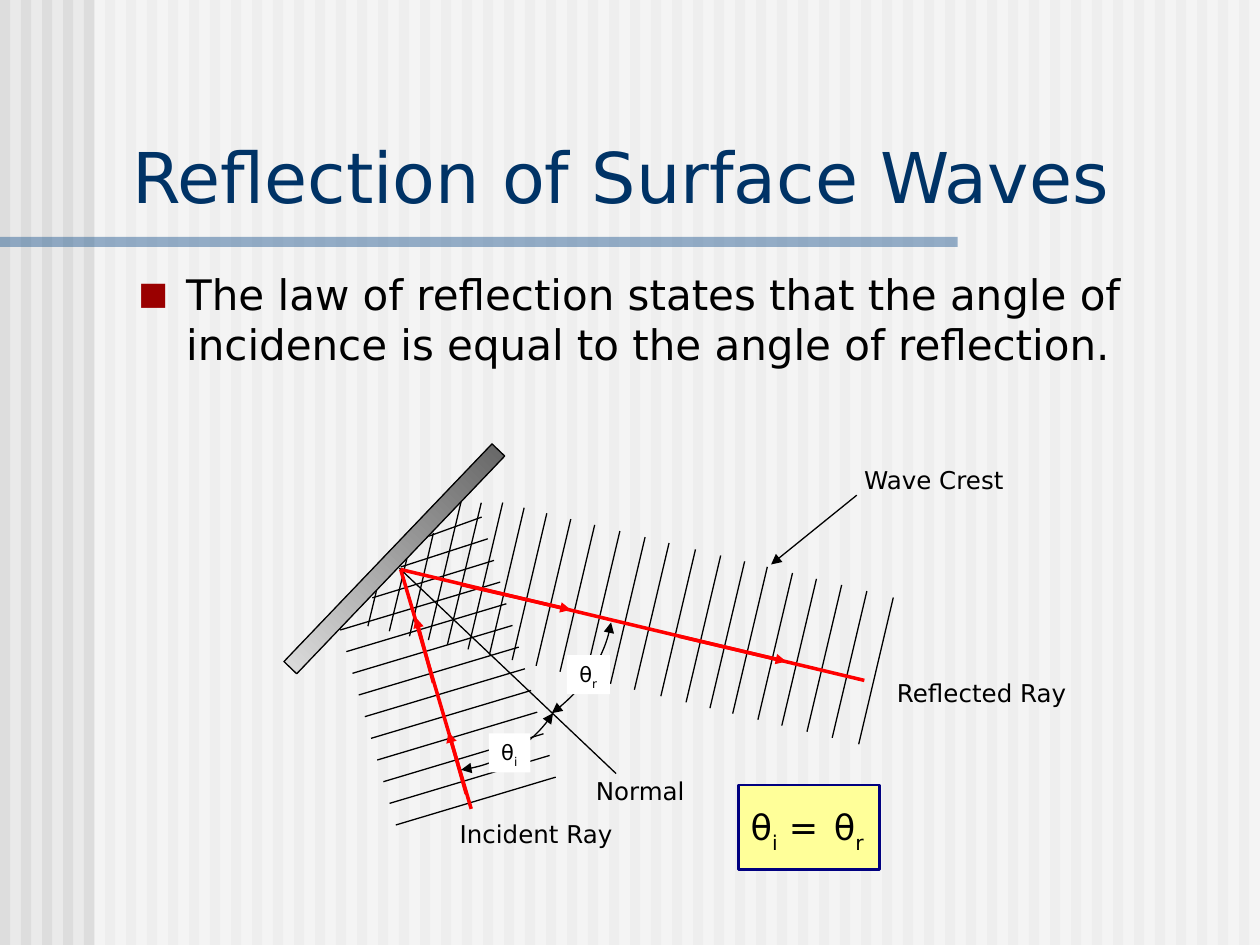
from lxml import etree
from pptx import Presentation
from pptx import util as u
from pptx.dml.color import RGBColor
from pptx.enum import shapes, text
from pptx.oxml.ns import qn

Inches, Pt = u.Inches, u.Pt
FONT = "DejaVu Sans"
COLORS = {
    "background": "EAEAEA", "stripe": "DDDDDD", "white": "FFFFFF",
    "rule": "336699", "title": "003366", "bullet": "9A0000",
    "black": "000000", "ray": "FF0000", "formula": "FFFF99",
    "navy": "000080", "mirror": "666666",
}
RGB = {name: RGBColor.from_string(c) for name, c in COLORS.items()}


def add_line(start, end, color="black", width=0.75, arrow=False):
    line = s.shapes.add_connector(shapes.MSO_CONNECTOR.STRAIGHT,
                                  *[Inches(v) for v in (*start, *end)])
    line.line.color.rgb = RGB[color]
    line.line.width = Pt(width)
    if arrow:
        etree.SubElement(line.line._get_or_add_ln(), qn("a:tailEnd"), type="triangle")
    etree.SubElement(line._element.spPr, qn("a:effectLst"))


def write(shape, runs, color="black", wrap=False):
    """Fill a shape with (text, size, is_subscript) runs, top left."""
    tf = shape.text_frame
    tf.word_wrap = wrap
    tf.vertical_anchor = text.MSO_ANCHOR.TOP
    p = tf.paragraphs[0]
    p.alignment = text.PP_ALIGN.LEFT
    for content, size, subscript in runs:
        r = p.add_run()
        r.text = content
        r.font.name = FONT
        r.font.size = Pt(size)
        r.font.color.rgb = RGB[color]
        if subscript:
            r._r.get_or_add_rPr().set("baseline", "-30000")


prs = Presentation()
prs.slide_width, prs.slide_height = Inches(10), Inches(7.5)
s = prs.slides.add_slide(prs.slide_layouts[5])
s.background.fill.solid()
s.background.fill.fore_color.rgb = RGB["background"]

# Striped backdrop, veil and title rule
bands = [(i / 6, 0, 0.08, 7.5, "stripe", 100) for i in range(60)]
bands += [(0.75, 0, 9.25, 7.5, "white", 50), (0, 1.88, 7.6, 0.08, "rule", 50)]
for x, y, w, h, color, opacity in bands:
    band = s.shapes.add_shape(shapes.MSO_SHAPE.RECTANGLE,
                              *[Inches(v) for v in (x, y, w, h)])
    band.shadow.inherit = False
    band.line.fill.background()
    band.fill.solid()
    band.fill.fore_color.rgb = RGB[color]
    if opacity < 100:
        srgb = band._element.spPr.find(".//" + qn("a:srgbClr"))
        etree.SubElement(srgb, qn("a:alpha"), val=str(opacity * 1000))

# Title, in front of the backdrop
title = s.shapes.title
s.shapes._spTree.append(title._element)
title.left, title.top, title.width, title.height = map(Inches, (0.95, 1.01, 8.93, 0.77))
write(title, [("Reflection of Surface Waves", 40, False)], "title", wrap=True)
title.text_frame.vertical_anchor = text.MSO_ANCHOR.BOTTOM
title.text_frame.auto_size = text.MSO_AUTO_SIZE.NONE

# Statement of the law
body = s.shapes.add_textbox(Inches(1), Inches(2.08), Inches(8.87), Inches(1.11))
write(body, [("The law of reflection states that the angle of incidence "
              "is equal to the angle of reflection.", 24, False)], wrap=True)
pPr = body.text_frame.paragraphs[0]._p.get_or_add_pPr()
pPr.set("marL", str(Inches(0.38)))
pPr.set("indent", str(Inches(-0.38)))
bullet_color = etree.SubElement(pPr, qn("a:buClr"))
etree.SubElement(bullet_color, qn("a:srgbClr"), val=COLORS["bullet"])
etree.SubElement(pPr, qn("a:buSzPct"), val="75000")
etree.SubElement(pPr, qn("a:buFont"), typeface=FONT)
etree.SubElement(pPr, qn("a:buChar"), char="■")

# Wave crest pointer and normal
add_line((6.8, 3.93), (6.12, 4.48), arrow=True)
add_line((3.17, 4.51), (4.89, 6.14))

# Incident crests; the first three are cut off by the mirror
for i in range(-3, 10):
    x, y = 2.7 + 0.049 * i, 5 + 0.172 * i
    start = (x, y) if i >= 0 else (2.73 - 0.225 * i, 4.99 + 0.245 * i)
    add_line(start, (x + 1.27, y - 0.38))

# Reflected crests; the first five are cut off by the mirror
for top, bottom in [((2.99, 4.68), (2.92, 4.97)), ((3.23, 4.43), (3.09, 5.01)),
                    ((3.44, 4.23), (3.25, 5.05)), ((3.66, 3.98), (3.4, 5.08)),
                    ((3.82, 3.99), (3.55, 5.12))]:
    add_line(top, bottom)
for x in (3.99, 4.16, 4.34, 4.53, 4.72, 4.92, 5.12, 5.31, 5.52,
          5.72, 5.91, 6.09, 6.29, 6.48, 6.68, 6.88, 7.09):
    y = 4.03 + 0.243 * (x - 4.16)
    add_line((x, y), (x - 0.275, y + 1.165))

# Rays, each with two arrowheads along the way
for start, end, arrows in [
    ((3.74, 6.42), (3.18, 4.52), [((3.7, 6.3), (3.56, 5.81)), ((3.44, 5.42), (3.3, 4.9))]),
    ((3.18, 4.52), (6.86, 5.4), [((3.66, 4.64), (4.53, 4.84)), ((5.39, 5.05), (6.24, 5.25))]),
]:
    add_line(start, end, "ray", 2)
    for tail, head in arrows:
        add_line(tail, head, "ray", 2, arrow=True)

# Angle arcs: cubic curves drawn in short steps
STEPS = 24
for curve in [((4.85, 4.94), (4.81, 5.2), (4.64, 5.47), (4.38, 5.66)),
              ((4.39, 5.66), (4.23, 5.91), (3.96, 6.07), (3.66, 6.11))]:
    points = []
    for k in range(STEPS + 1):
        t = k / STEPS
        weights = ((1 - t) ** 3, 3 * t * (1 - t) ** 2, 3 * t * t * (1 - t), t ** 3)
        points.append([Inches(sum(w * pt[axis] for w, pt in zip(weights, curve)))
                       for axis in (0, 1)])
    builder = s.shapes.build_freeform(*points[0])
    builder.add_line_segments(points[1:], close=False)
    arc = builder.convert_to_shape()
    arc.shadow.inherit = False
    arc.fill.background()
    arc.line.color.rgb = RGB["black"]
    arc.line.width = Pt(0.75)
    for end in ("a:headEnd", "a:tailEnd"):
        etree.SubElement(arc.line._get_or_add_ln(), qn(end), type="triangle")

# Angle labels and the formula
formula = [("θ", 20, False), ("i", 20, True), (" =", 20, False),
           (" ", 28, False), ("θ", 20, False), ("r", 20, True)]
for x, y, w, h, fill, runs in [
    (4.5, 5.2, 0.34, 0.31, "white", [("θ", 12, False), ("r", 12, True)]),
    (3.88, 5.82, 0.33, 0.31, "white", [("θ", 12, False), ("i", 12, True)]),
    (5.86, 6.23, 1.12, 0.67, "formula", formula),
]:
    box = s.shapes.add_shape(shapes.MSO_SHAPE.RECTANGLE,
                             *[Inches(v) for v in (x, y, w, h)])
    box.shadow.inherit = False
    box.fill.solid()
    box.fill.fore_color.rgb = RGB[fill]
    if fill == "formula":
        box.line.color.rgb = RGB["navy"]
        box.line.width = Pt(1.5)
    else:
        box.line.fill.background()
    write(box, runs)

# Captions
for caption, x, y, w in [("Wave Crest", 6.76, 3.64, 1.32),
                         ("Reflected Ray", 7.02, 5.33, 1.69),
                         ("Incident Ray", 3.55, 6.45, 1.43),
                         ("Normal", 4.63, 6.11, 0.91)]:
    label = s.shapes.add_textbox(Inches(x), Inches(y), Inches(w), Inches(0.33))
    write(label, [(caption, 14, False)])

# Mirror
mirror = s.shapes.add_shape(shapes.MSO_SHAPE.RECTANGLE, Inches(3.06), Inches(3.24),
                            Inches(0.14), Inches(2.39))
mirror.rotation = 43.7
mirror.shadow.inherit = False
mirror.fill.gradient()
mirror.fill.gradient_angle = 270
for stop, color in zip(mirror.fill.gradient_stops, ("mirror", "stripe")):
    stop.color.rgb = RGB[color]
mirror.line.color.rgb = RGB["black"]
mirror.line.width = Pt(0.75)

prs.save("out.pptx")
